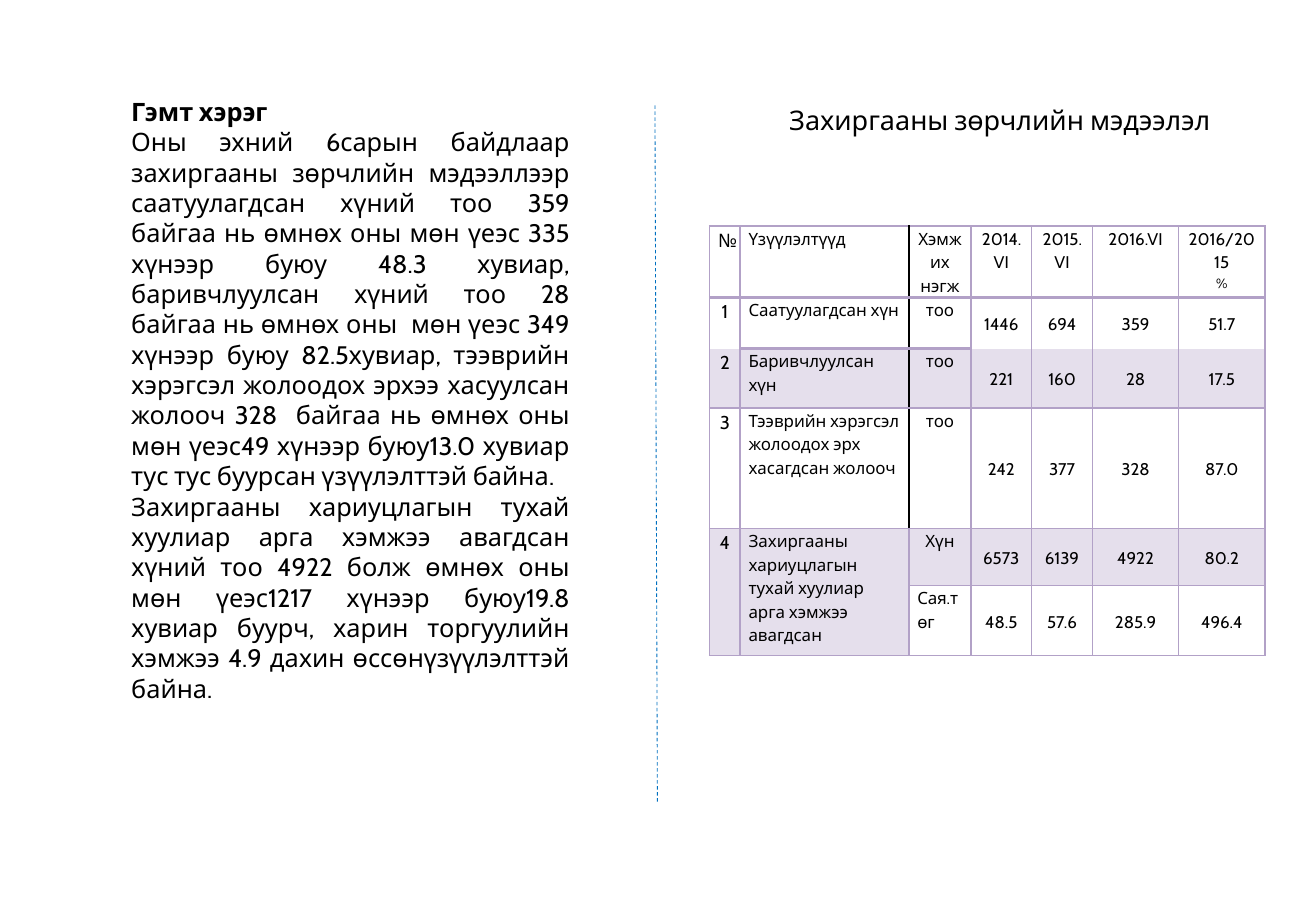
from lxml import etree
from pptx import Presentation
from pptx.dml.color import RGBColor
from pptx.enum.dml import MSO_LINE
from pptx.enum.shapes import MSO_CONNECTOR
from pptx.enum.text import MSO_ANCHOR, MSO_AUTO_SIZE, PP_ALIGN
from pptx.oxml.ns import qn
from pptx.util import Inches, Pt

LEFT, CENTER, RIGHT = PP_ALIGN.LEFT, PP_ALIGN.CENTER, PP_ALIGN.RIGHT
JUSTIFY = PP_ALIGN.JUSTIFY
TOP, MIDDLE = MSO_ANCHOR.TOP, MSO_ANCHOR.MIDDLE
FONT = "Cabin"
BLACK, WHITE, BLUE = "000000", "FFFFFF", "0070C0"
LILAC, PALE = "B2A1C7", "E5DFEC"

TITLE = "Захиргааны зөрчлийн мэдээлэл"
STORY = [
    "Гэмт хэрэг",
    "Оны эхний 6сарын байдлаар захиргааны зөрчлийн мэдээллээр саатуулагдсан "
    "хүний тоо 359 байгаа нь өмнөх оны мөн үеэс 335 хүнээр буюу 48.3 хувиар, "
    "баривчлуулсан хүний тоо 28 байгаа нь өмнөх оны  мөн үеэс 349 хүнээр буюу "
    "82.5хувиар, тээврийн хэрэгсэл жолоодох эрхээ хасуулсан жолооч 328  байгаа "
    "нь өмнөх оны мөн үеэс49 хүнээр буюу13.0 хувиар тус тус буурсан "
    "үзүүлэлттэй байна.",
    "Захиргааны хариуцлагын тухай хуулиар арга хэмжээ авагдсан хүний тоо 4922 "
    "болж өмнөх оны мөн үеэс1217 хүнээр буюу19.8 хувиар буурч, харин торгуулийн "
    "хэмжээ 4.9 дахин өссөнүзүүлэлттэй байна.",
]
ROWS = [
    ("№", "Үзүүлэлтүүд", "Хэмжих нэгж", "2014.VI", "2015.VI", "2016.VI",
     "2016/2015\n%"),
    ("1", "Саатуулагдсан хүн", "тоо", "1446", "694", "359", "51.7"),
    ("2", "Баривчлуулсан хүн", "тоо", "221", "160", "28", "17.5"),
    ("3", "Тээврийн хэрэгсэл жолоодох эрх хасагдсан жолооч", "тоо",
     "242", "377", "328", "87.0"),
    ("4", "Захиргааны хариуцлагын тухай хуулиар арга хэмжээ авагдсан", "Хүн",
     "6573", "6139", "4922", "80.2"),
    ("", "", "Сая.төг", "48.5", "57.6", "285.9", "496.4"),
]
WIDTHS = [0.25, 1.39, 0.51, 0.5, 0.5, 0.71, 0.71]
HEIGHTS = [0.59, 0.42, 0.49, 0.99, 0.47, 0.58]
SHADED = (2, 4)


def color(code):
    return RGBColor.from_string(code)


def apply(item, **values):
    for name, value in values.items():
        setattr(item, name, value)


def write(para, text, size, bold=False):
    run = para.add_run()
    run.text = text
    apply(run.font, name=FONT, size=Pt(size), bold=bold)
    run.font.color.rgb = color(BLACK)


def place(shape, left, top, width, height):
    apply(shape, left=Inches(left), top=Inches(top),
          width=Inches(width), height=Inches(height))


def edge(cell, side, line):
    """Draw one cell border; a line of None leaves that side open."""
    code, width = line or (None, 0)
    node = etree.SubElement(cell._tc.get_or_add_tcPr(), qn("a:ln" + side),
                            w=str(Pt(width)))
    if code:
        fill = etree.SubElement(node, qn("a:solidFill"))
        etree.SubElement(fill, qn("a:srgbClr"), val=code)
    else:
        etree.SubElement(node, qn("a:noFill"))


def across(level, col):
    """Horizontal rule at a level, counted from the table top."""
    if level == 2 and col not in (1, 2):
        return None
    return LILAC, 1.5 if level in (1, 2) else 1


def down(level, row):
    """Vertical rule at a level, counted from the table's left side."""
    return BLACK if level == 2 and row < 4 else LILAC, 1


def fill_cell(cell, row, col, text):
    numeric = row > 0 and col > 2
    apply(cell, margin_left=Inches(0.07), margin_right=Inches(0.07),
          margin_top=0, margin_bottom=0,
          vertical_anchor=MIDDLE if numeric else TOP)
    for side, line in (("L", down(col, row)), ("R", down(col + 1, row)),
                       ("T", across(row, col)), ("B", across(row + 1, col))):
        edge(cell, side, line)
    cell.fill.solid()
    cell.fill.fore_color.rgb = color(PALE if row in SHADED else WHITE)
    if not text:
        return
    para = cell.text_frame.paragraphs[0]
    align = LEFT if col == 1 or (row, col) == (5, 2) else CENTER
    apply(para, line_spacing=1.15,
          alignment=RIGHT if (row, col) == (0, 0) else align)
    main, _, small = text.partition("\n")
    write(para, main, 10 if col else 11)
    if small:
        para.add_line_break()
        write(para, small, 8)


deck = Presentation()
apply(deck, slide_width=Inches(10.83), slide_height=Inches(7.5))
slide = deck.slides.add_slide(deck.slide_layouts[1])
title, story = slide.placeholders

place(title, 6.3, 0.8, 3.86, 0.37)
apply(title.text_frame, word_wrap=True, auto_size=MSO_AUTO_SIZE.NONE,
      vertical_anchor=TOP)
head = title.text_frame.paragraphs[0]
head.alignment = CENTER
write(head, TITLE, 16)

place(story, 0.98, 0.79, 3.81, 5.2)
frame = story.text_frame
apply(frame, word_wrap=True, auto_size=MSO_AUTO_SIZE.NONE,
      vertical_anchor=TOP, margin_top=0)
for i, text in enumerate(STORY):
    para = frame.add_paragraph() if i else frame.paragraphs[0]
    props = para._p.get_or_add_pPr()
    props.set("marL", "0")
    props.set("indent", "0")
    etree.SubElement(props, qn("a:buNone"))
    apply(para, alignment=JUSTIFY, space_before=Pt(0))
    write(para, text, 15, bold=i == 0)

rule = slide.shapes.add_connector(MSO_CONNECTOR.STRAIGHT, Inches(5.41),
                                  Inches(6.6), Inches(5.39), Inches(0.85))
apply(rule.line, width=Pt(0.5), dash_style=MSO_LINE.DASH)
rule.line.color.rgb = color(BLUE)
etree.SubElement(rule._element.spPr, qn("a:effectLst"))

table = slide.shapes.add_table(
    len(ROWS), len(WIDTHS), Inches(5.84), Inches(1.86),
    Inches(sum(WIDTHS)), Inches(sum(HEIGHTS))).table
apply(table, first_row=False, horz_banding=False)
for column, width in zip(table.columns, WIDTHS):
    column.width = Inches(width)
for r, (texts, height) in enumerate(zip(ROWS, HEIGHTS)):
    table.rows[r].height = Inches(height)
    for c, text in enumerate(texts):
        fill_cell(table.cell(r, c), r, c, text)
for c in (0, 1):
    table.cell(4, c).merge(table.cell(5, c))

deck.save("out.pptx")
